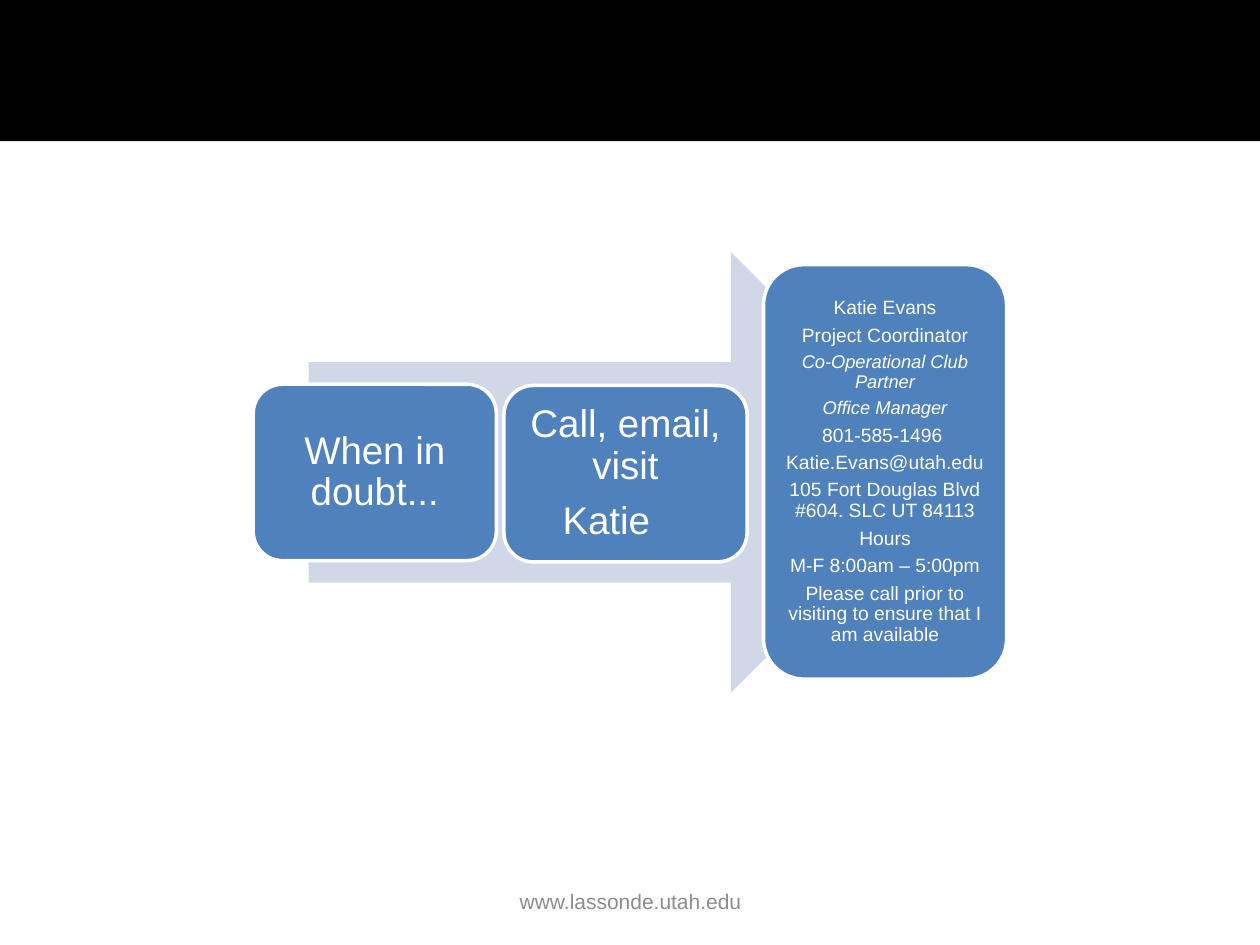
from dataclasses import dataclass

from pptx import Presentation
from pptx.dml.color import RGBColor
from pptx.enum.shapes import MSO_SHAPE as Preset
from pptx.enum.text import MSO_ANCHOR as Anchor, PP_ALIGN as Align
from pptx.util import Inches, Pt

COLORS = {
    "banner": "000000",
    "arrow": "D0D8E8",
    "step": "4F81BD",
    "white": "FFFFFF",
    "footer": "8C8C8C",
}
FONT = "Arial"


@dataclass
class Line:
    text: str
    size: float
    italic: bool = False


@dataclass
class Step:
    left: float
    top: float
    height: float
    inset: float
    lines: list[Line]


STEP_WIDTH = 1.93
STEPS = [
    Step(2.01, 3.05, 1.4, 0.09, [Line("When in doubt...", 22)]),
    Step(4, 3.06, 1.4, 0.09, [Line("Call, email, visit", 22), Line("Katie \t", 22)]),
    Step(6.06, 2.1, 3.29, 0.05, [
        Line("Katie Evans", 11),
        Line("Project Coordinator", 11),
        Line("Co-Operational Club Partner", 10.5, italic=True),
        Line("Office Manager", 10.5, italic=True),
        Line("801-585-1496 ", 11),
        Line("Katie.Evans@utah.edu", 11),
        Line("105 Fort Douglas Blvd #604. SLC UT 84113", 11),
        Line("Hours", 11),
        Line("M-F 8:00am – 5:00pm", 11),
        Line("Please call prior to visiting to ensure that I am available", 11),
    ]),
]


def rgb(name: str) -> RGBColor:
    return RGBColor.from_string(COLORS[name])


def add_block(slide, preset, left: float, top: float, width: float,
              height: float, color: str):
    block = slide.shapes.add_shape(
        preset, Inches(left), Inches(top), Inches(width), Inches(height))
    block.shadow.inherit = False
    block.fill.solid()
    block.fill.fore_color.rgb = rgb(color)
    block.line.fill.background()
    return block


def write_line(paragraph, line: Line, color: str) -> None:
    paragraph.text = line.text
    paragraph.alignment = Align.CENTER
    font = paragraph.font
    font.name = FONT
    font.size = Pt(line.size)
    font.italic = line.italic
    font.color.rgb = rgb(color)


def add_step(slide, step: Step) -> None:
    box = add_block(slide, Preset.ROUNDED_RECTANGLE, step.left, step.top,
                    STEP_WIDTH, step.height, "step")
    box.line.color.rgb = rgb("white")
    box.line.width = Pt(2)
    frame = box.text_frame
    frame.word_wrap = True
    frame.vertical_anchor = Anchor.MIDDLE
    frame.margin_left = frame.margin_right = Inches(step.inset)
    frame.margin_top = frame.margin_bottom = Inches(step.inset)
    for index, line in enumerate(step.lines):
        paragraph = frame.add_paragraph() if index else frame.paragraphs[0]
        write_line(paragraph, line, "white")
        paragraph.line_spacing = 0.9
        paragraph.space_after = Pt(round(0.35 * line.size, 1))


def add_footer(slide, address: str) -> None:
    footer = slide.shapes.add_textbox(
        Inches(3.42), Inches(6.95), Inches(3.17), Inches(0.4))
    frame = footer.text_frame
    frame.word_wrap = True
    frame.vertical_anchor = Anchor.MIDDLE
    write_line(frame.paragraphs[0], Line(address, 12), "footer")


def main() -> None:
    deck = Presentation()
    deck.slide_width, deck.slide_height = Inches(10), Inches(7.5)
    slide = deck.slides.add_slide(deck.slide_layouts[6])

    # Banner and footer
    add_block(slide, Preset.RECTANGLE, 0, 0, 10, 1.12, "banner")
    add_footer(slide, "www.lassonde.utah.edu")

    # Process arrow with its steps
    add_block(slide, Preset.RIGHT_ARROW, 2.45, 2, 5.1, 3.5, "arrow")
    for step in STEPS:
        add_step(slide, step)

    deck.save("out.pptx")


if __name__ == "__main__":
    main()
